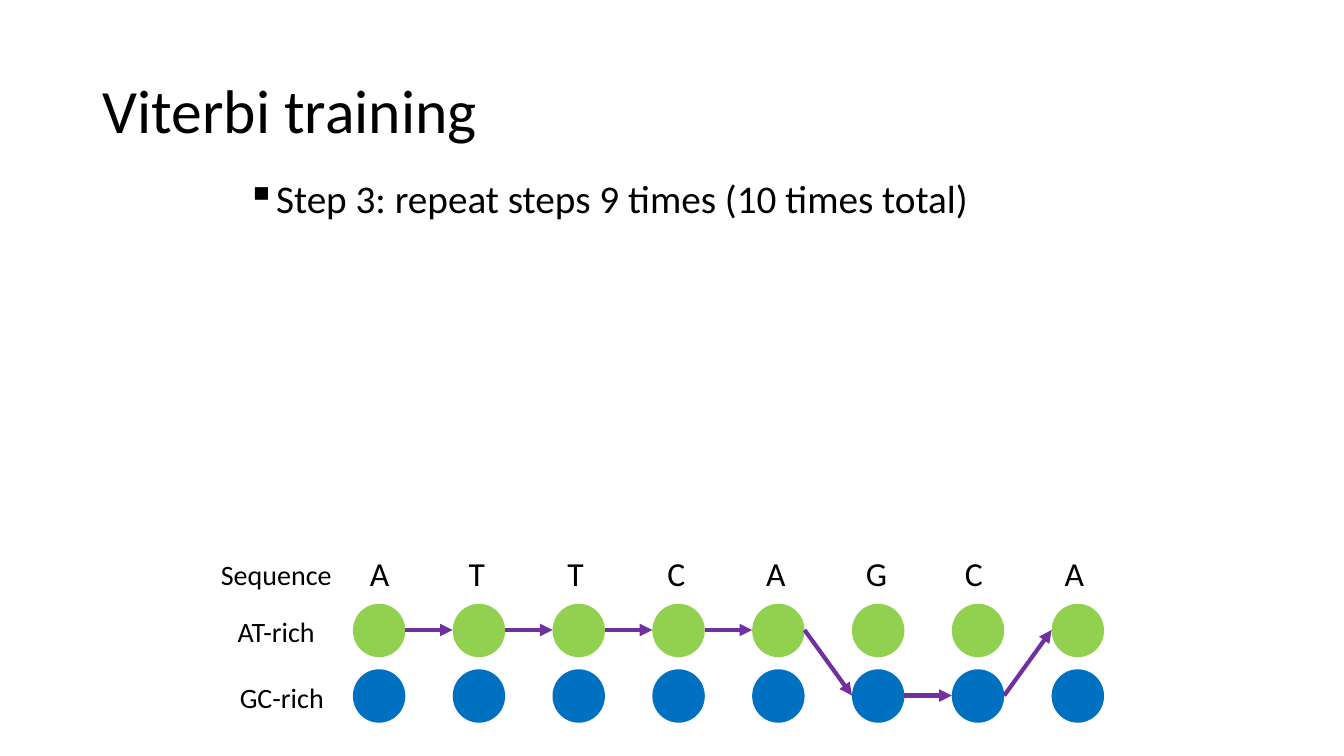
from lxml import etree
from pptx import Presentation
from pptx.dml.color import RGBColor
from pptx.enum.shapes import MSO_CONNECTOR, MSO_SHAPE
from pptx.enum.text import MSO_ANCHOR, MSO_AUTO_SIZE, PP_ALIGN
from pptx.oxml.ns import qn
from pptx.util import Pt

EMU_PER_PX = 9144
TITLE_ONLY = 5
FONT = "Calibri"
BLACK = RGBColor(0x00, 0x00, 0x00)
GREEN = RGBColor(0x92, 0xD0, 0x50)
BLUE = RGBColor(0x00, 0x70, 0xC0)
PURPLE = RGBColor(0x70, 0x30, 0xA0)
LEFT, CENTER = PP_ALIGN.LEFT, PP_ALIGN.CENTER
MIDDLE = MSO_ANCHOR.MIDDLE
NO_AUTOFIT = MSO_AUTO_SIZE.NONE
ELLIPSE = MSO_SHAPE.OVAL
STRAIGHT = MSO_CONNECTOR.STRAIGHT

SEQUENCE = "ATTCAGCA"
STATE_SEQUENCE = [0, 0, 0, 0, 0, 1, 1, 0]
STATE_COLORS = [GREEN, BLUE]
STATE_TOPS = [599, 664]
CIRCLE_LEFT, CIRCLE_PITCH = 350, 99
CIRCLE_WIDTH, CIRCLE_HEIGHT = 52, 53
LETTER_LEFT, LETTER_SPAN = 357, 689


def px(length):
    return length * EMU_PER_PX


class SlideBuilder:
    """Draws styled elements on one slide, with lengths in px."""

    def __init__(self, presentation):
        layout = presentation.slide_layouts[TITLE_ONLY]
        self.slide = presentation.slides.add_slide(layout)
        self.shapes = self.slide.shapes

    def set_text(self, shape, text, size, align=LEFT):
        frame = shape.text_frame
        frame.word_wrap = True
        frame.auto_size = NO_AUTOFIT
        frame.text = text
        paragraph = frame.paragraphs[0]
        paragraph.alignment = align
        paragraph.font.name = FONT
        paragraph.font.size = Pt(size)
        paragraph.font.color.rgb = BLACK
        return paragraph

    def title(self, text, left, top, width, height):
        shape = self.shapes.title
        shape.left, shape.top = px(left), px(top)
        shape.width, shape.height = px(width), px(height)
        shape.text_frame.vertical_anchor = MIDDLE
        self.set_text(shape, text, 44).line_spacing = 0.9

    def text(self, text, left, top, width, height, size, align=LEFT):
        shape = self.shapes.add_textbox(px(left), px(top), px(width), px(height))
        return self.set_text(shape, text, size, align)

    def bullet(self, text, left, top, width, height):
        paragraph = self.text(text, left, top, width, height, 28)
        paragraph.line_spacing = 0.9
        paragraph.space_before = Pt(10)
        properties = paragraph._p.get_or_add_pPr()
        properties.set("marL", str(px(25)))
        properties.set("indent", str(px(-25)))
        mark = etree.Element(qn("a:buChar"), char="▪")
        properties.find(qn("a:spcBef")).addnext(mark)

    def circle(self, left, top, color):
        shape = self.shapes.add_shape(
            ELLIPSE, px(left), px(top), px(CIRCLE_WIDTH), px(CIRCLE_HEIGHT))
        shape.shadow.inherit = False
        shape.fill.solid()
        shape.fill.fore_color.rgb = color
        shape.line.fill.background()

    def arrow(self, start_x, start_y, end_x, end_y):
        connector = self.shapes.add_connector(
            STRAIGHT, px(start_x), px(start_y), px(end_x), px(end_y))
        connector.line.color.rgb = PURPLE
        connector.line.width = Pt(3)
        properties = connector._element.spPr
        etree.SubElement(properties.find(qn("a:ln")), qn("a:tailEnd"), type="triangle")
        etree.SubElement(properties, qn("a:effectLst"))


def main():
    presentation = Presentation()
    presentation.slide_width, presentation.slide_height = px(1333), px(750)
    builder = SlideBuilder(presentation)
    builder.title("Viterbi training", 92, 40, 1150, 145)
    builder.bullet("Step 3: repeat steps 9 times (10 times total)", 235, 173, 862, 381)

    circle_lefts = [CIRCLE_LEFT + CIRCLE_PITCH * column for column in range(len(SEQUENCE))]
    for left in circle_lefts:
        for top, color in zip(STATE_TOPS, STATE_COLORS):
            builder.circle(left, top, color)

    builder.text("AT-rich", 226, 605, 104, 44, 20)
    builder.text("GC-rich", 228, 670, 104, 44, 20)
    builder.text("Sequence", 192, 548, 164, 44, 20, CENTER)
    for column, letter in enumerate(SEQUENCE):
        left = LETTER_LEFT + column * LETTER_SPAN // (len(SEQUENCE) - 1)
        builder.text(letter, left, 544, 25, 50, 24)

    stops = [(left, STATE_TOPS[state] + CIRCLE_HEIGHT // 2)
             for left, state in zip(circle_lefts, STATE_SEQUENCE)]
    for (left, start_y), (end_x, end_y) in zip(stops, stops[1:]):
        builder.arrow(left + CIRCLE_WIDTH, start_y, end_x, end_y)

    presentation.save("out.pptx")


if __name__ == "__main__":
    main()
